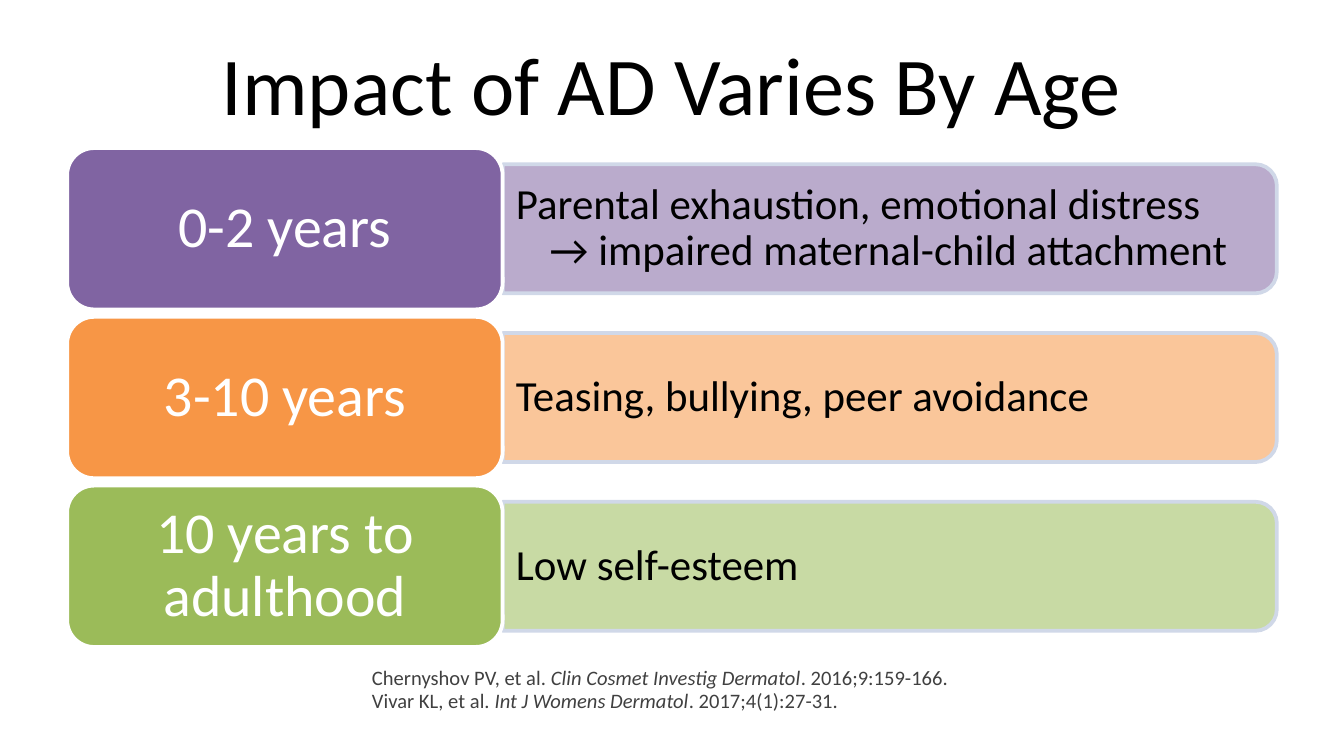
"""Build a slide on how the impact of AD varies by age."""
from lxml import etree
from pptx import Presentation
from pptx.dml.color import RGBColor
from pptx.enum import shapes, text
from pptx.oxml import ns
from pptx.util import Cm, Pt

BLACK = RGBColor(0x00, 0x00, 0x00)
WHITE = RGBColor(0xFF, 0xFF, 0xFF)
GREY = RGBColor(0x40, 0x40, 0x40)
EDGE = RGBColor(0xD0, 0xD8, 0xE8)
PURPLE = RGBColor(0x80, 0x64, 0xA2)
LILAC = RGBColor(0xB3, 0xA2, 0xC7)
ORANGE = RGBColor(0xF7, 0x96, 0x46)
PEACH = RGBColor(0xFA, 0xC0, 0x90)
GREEN = RGBColor(0x9B, 0xBB, 0x59)
LIME = RGBColor(0xC3, 0xD6, 0x9B)

prs = Presentation()
prs.slide_width, prs.slide_height = Cm(25.4), Cm(14.29)
slide = prs.slides.add_slide(prs.slide_layouts[6])


def add_block(kind, left, top, width, height, fill, line):
    block = slide.shapes.add_shape(kind, Cm(left), Cm(top), Cm(width), Cm(height))
    block.shadow.inherit = False
    block.fill.solid()
    block.fill.fore_color.rgb = fill
    block.line.color.rgb = line
    block.line.width = Pt(2)
    return block


def add_words(place, lines, size, color, align, anchor, inset=(0.25, 0.13), space=0.9):
    box = slide.shapes.add_textbox(*map(Cm, place))
    frame = box.text_frame
    frame.word_wrap = True
    frame.vertical_anchor = anchor
    frame.margin_left = frame.margin_right = Cm(inset[0])
    frame.margin_top = frame.margin_bottom = Cm(inset[1])
    frame.text = "\n".join(lines)
    for para in frame.paragraphs:
        para.alignment = align
        para.line_spacing = space
        para.font.name = "Calibri"
        para.font.size = Pt(size)
        para.font.color.rgb = color
    return frame


LEFT, CENTER = text.PP_ALIGN.LEFT, text.PP_ALIGN.CENTER
TOP, MIDDLE = text.MSO_ANCHOR.TOP, text.MSO_ANCHOR.MIDDLE

add_words((1.27, 0.36, 22.86, 2.39), ["Impact of AD Varies By Age"], 44, BLACK,
          CENTER, MIDDLE, space=1.0)

ages = [
    ("0-2 years", "Parental exhaustion, emotional distress\v→ impaired maternal-child attachment",
     PURPLE, LILAC),
    ("3-10 years", "Teasing, bullying, peer avoidance", ORANGE, PEACH),
    ("10 years to adulthood", "Low self-esteem", GREEN, LIME),
]
tab_x, tab_w, tab_h = 1.27, 8.23, 3.05
bar_x, bar_w, bar_h = tab_x + tab_w, 14.63, 2.44
for row, (age, effect, dark, light) in enumerate(ages):
    y = 2.8 + row * 3.19
    mid = y + tab_h / 2
    bar = add_block(shapes.MSO_SHAPE.ROUND_2_SAME_RECTANGLE, bar_x + (bar_w - bar_h) / 2,
                    mid - bar_w / 2, bar_h, bar_w, light, EDGE)
    bar.rotation = 90
    tint = bar.fill._xPr.find(ns.qn("a:solidFill"))[0]
    etree.SubElement(tint, ns.qn("a:alpha"), val="90000")
    note = add_words((bar_x, mid - 1.09, 14.5, 2.18), [effect], 23, BLACK, LEFT, MIDDLE)
    para = note.paragraphs[0]
    para.level = 1
    props = para._p.get_or_add_pPr()
    props.set("marL", str(Cm(0.64)))
    props.set("indent", str(Cm(-0.64)))
    add_block(shapes.MSO_SHAPE.ROUNDED_RECTANGLE, tab_x, y, tab_w, tab_h, dark, WHITE)
    add_words((tab_x + 0.15, y + 0.15, tab_w - 0.3, tab_h - 0.3), [age], 31, WHITE,
              CENTER, MIDDLE, (0.33, 0.15))

cites = [
    ("Chernyshov PV, et al. ", "Clin Cosmet Investig Dermatol", ". 2016;9:159-166."),
    ("Vivar KL, et al. ", "Int J Womens Dermatol", ". 2017;4(1):27-31."),
]
refs = add_words((6.78, 12.5, 17.35, 1.65), ["", ""], 11, GREY, LEFT, TOP)
for para, parts in zip(refs.paragraphs, cites):
    for part in parts:
        run = para.add_run()
        run.text = part
        run.font.italic = part == parts[1]
        run.font.name = "Calibri"
        run.font.size = Pt(11)
        run.font.color.rgb = GREY

prs.save("out.pptx")
